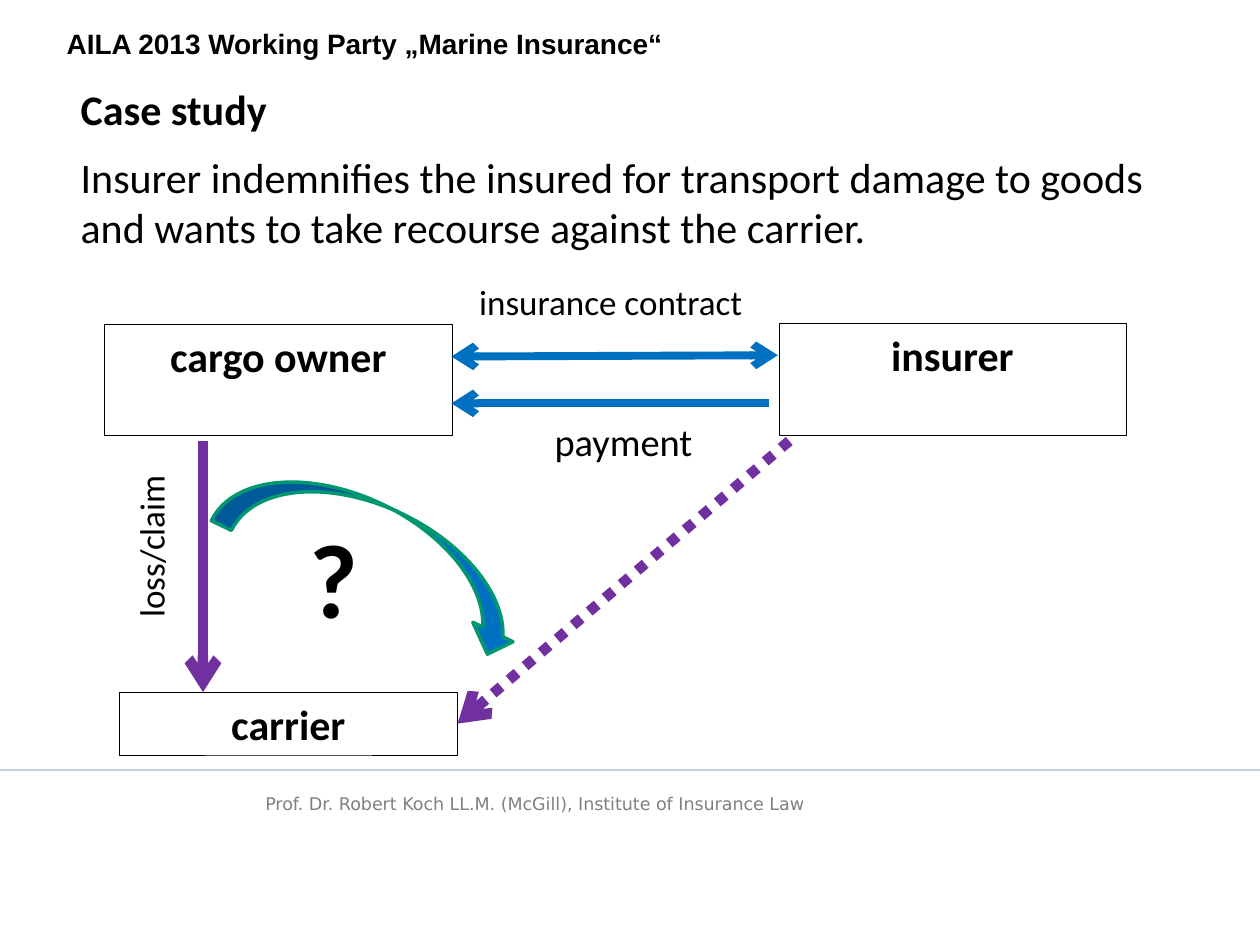
import pptx
import pptx.dml.color
import pptx.enum.dml
import pptx.enum.shapes
import pptx.enum.text
import pptx.oxml.ns
import pptx.util
from lxml import etree

Pt = pptx.util.Pt
FORMS = pptx.enum.shapes.MSO_SHAPE
ALIGN = pptx.enum.text.PP_ALIGN
DOTS = pptx.enum.dml.MSO_LINE.ROUND_DOT

COLORS = {
    "black": "000000",
    "gray": "808080",
    "rule": "C2CFE7",
    "blue": "0070C0",
    "purple": "7030A0",
    "green": "009771",
}

# Text formats
HEAD = {"name": "Arial", "size": Pt(16), "bold": True}
BODY = {"name": "Calibri", "size": Pt(24), "bold": False}
STRONG = {**BODY, "bold": True}
LABEL = {**BODY, "size": Pt(20)}
PAY = {**BODY, "size": Pt(22)}
MARK = {**STRONG, "size": Pt(60)}
FOOT = {"name": "DejaVu Sans", "size": Pt(10), "bold": False}


def rgb(color):
    return pptx.dml.color.RGBColor.from_string(COLORS[color])


def write(frame, parts, align=ALIGN.LEFT, color="black", gap=0):
    """Fill a frame with one paragraph for each (text, format) pair."""
    frame.word_wrap = True
    frame.vertical_anchor = pptx.enum.text.MSO_ANCHOR.TOP
    for i, (text, fmt) in enumerate(parts):
        para = frame.add_paragraph() if i else frame.paragraphs[0]
        para.alignment = align
        if i < len(parts) - 1:
            para.space_after = Pt(gap)
        run = para.add_run()
        run.text = text
        for key, value in fmt.items():
            setattr(run.font, key, value)
        run.font.color.rgb = rgb(color)


def add_text(slide, area, parts, turn=0, **style):
    box = slide.shapes.add_textbox(*map(Pt, area))
    box.rotation = turn
    write(box.text_frame, parts, **style)


def add_form(slide, kind, area, edge, width, fill=None):
    shape = slide.shapes.add_shape(kind, *map(Pt, area))
    shape.shadow.inherit = False
    if fill:
        shape.fill.solid()
        shape.fill.fore_color.rgb = rgb(fill)
    else:
        shape.fill.background()
    shape.line.color.rgb = rgb(edge)
    shape.line.width = Pt(width)
    return shape


def add_party(slide, area, name):
    shape = add_form(slide, FORMS.RECTANGLE, area, "black", 0.25)
    write(shape.text_frame, [(name, STRONG)], ALIGN.CENTER)


def add_line(slide, ends, color, width, tips=(), dash=None):
    """Draw a line; tips names the ends that carry an arrowhead."""
    kind = pptx.enum.shapes.MSO_CONNECTOR.STRAIGHT
    link = slide.shapes.add_connector(kind, *map(Pt, ends))
    link.line.color.rgb = rgb(color)
    link.line.width = Pt(width)
    if dash:
        link.line.dash_style = dash
    qn = pptx.oxml.ns.qn
    props = link._element.spPr
    for tip in tips:
        etree.SubElement(props.find(qn("a:ln")), qn(f"a:{tip}"), type="arrow")
    etree.SubElement(props, qn("a:effectLst"))


def main():
    deck = pptx.Presentation()
    deck.slide_width, deck.slide_height = Pt(720), Pt(540)
    slide = deck.slides.add_slide(deck.slide_layouts[6])

    # Footer rule
    add_line(slide, (0, 440, 720, 440), "rule", 0.75)

    # Parties
    add_party(slide, (59.75, 185.5, 198.5, 63.5), "cargo owner")
    add_party(slide, (445, 185, 198.5, 63.5), "insurer")
    add_party(slide, (68.25, 395.5, 193, 36), "carrier")

    # Heading and case
    add_text(slide, (31, 11.5, 480, 26.5),
             [("AILA 2013 Working Party „Marine Insurance“", HEAD)])
    add_text(slide, (39, 44, 650, 106.5),
             [("Case study", STRONG),
              ("Insurer indemnifies the insured for transport damage to goods "
               "and wants to take recourse against the carrier.", BODY)],
             gap=10)

    # Contract and payment
    add_text(slide, (252, 157, 198.5, 31.5),
             [("insurance contract ", LABEL)], align=ALIGN.CENTER)
    add_text(slide, (279.5, 235.5, 153.5, 34),
             [("payment", PAY)], align=ALIGN.CENTER)
    add_line(slide, (258, 203.75, 444.5, 203), "blue", 4.5,
             ("headEnd", "tailEnd"))
    add_line(slide, (439.5, 230.5, 258, 230.5), "blue", 4.5, ("tailEnd",))

    # Claim and recourse
    add_line(slide, (116, 252, 116, 395.5), "purple", 6, ("tailEnd",))
    add_text(slide, (-13, 296.5, 198.5, 31.5),
             [("loss/claim", LABEL)], turn=270, align=ALIGN.CENTER)
    curve = add_form(slide, FORMS.CURVED_DOWN_ARROW, (122.5, 290, 188, 51),
                     "green", 2, "blue")
    curve.rotation = 25.8
    add_line(slide, (451, 252, 261.5, 413.5), "purple", 6, ("tailEnd",), DOTS)
    add_text(slide, (36.5, 290, 309, 80), [("?", MARK)], align=ALIGN.CENTER)

    # Footer
    add_text(slide, (144.5, 449.5, 505, 19.5),
             [("Prof. Dr. Robert Koch LL.M. (McGill), "
               "Institute of Insurance Law", FOOT)], color="gray")

    deck.save("out.pptx")


if __name__ == "__main__":
    main()
